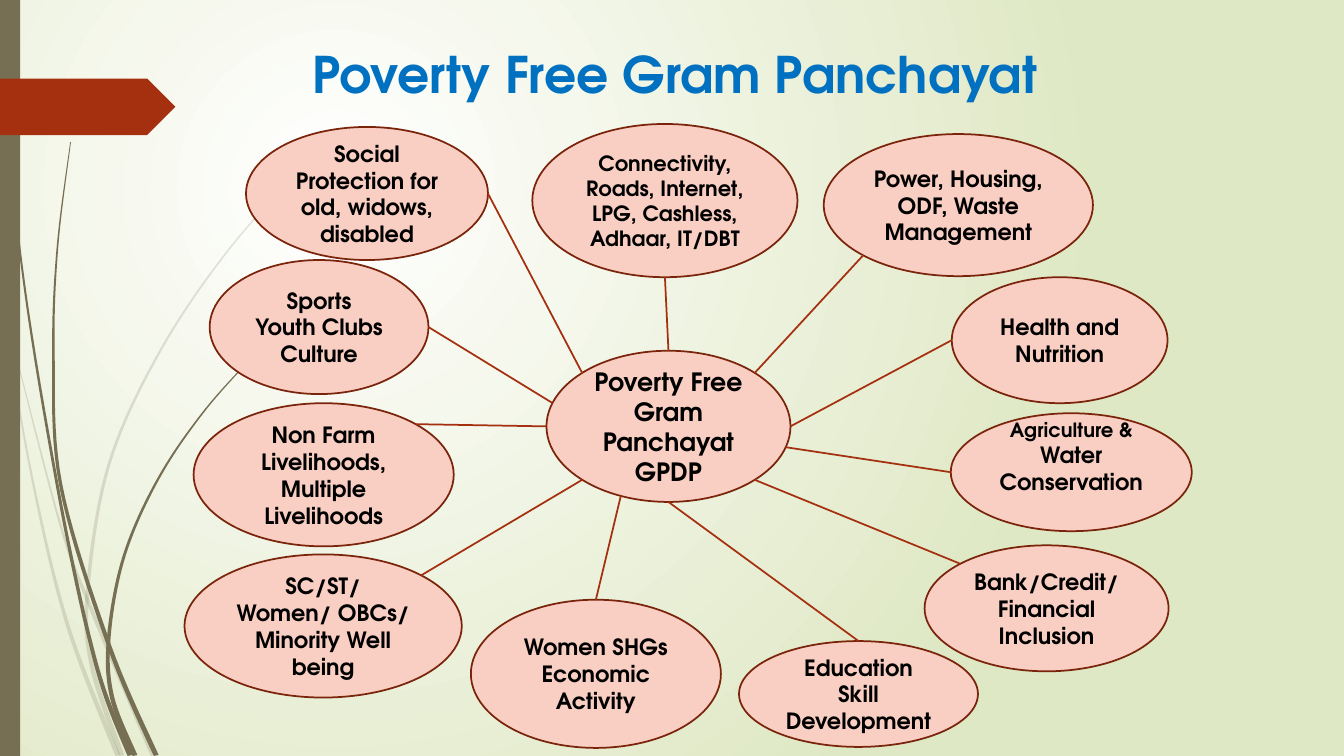
import math

import pptx
import pptx.util
import pptx.dml.color
import pptx.enum.shapes
import pptx.enum.text
import pptx.oxml
import pptx.oxml.ns

PX = 9144  # one px is a hundredth of an inch
FONT = "TeX Gyre Adventor"
COLORS = {"white": "FFFFFF", "green": "DFE8C4", "stem": "766F54", "tag": "A53010",
          "bubble": "F9CFC3", "rim": "7A240C", "text": "000000", "title": "0070C0"}

# Grass blades: points along the middle, from the thin tip to the root
PALE_BLADES = [
    [(0, 290), (31, 470), (67, 620), (117, 750)],
    [(14, 345), (60, 521), (90, 603), (152, 750)],
    [(312, 153), (229, 245), (159, 348), (108, 461), (87, 585), (91, 660), (121, 750)],
]
DARK_BLADES = [
    [(4, 0), (18, 233), (56, 477), (95, 658), (129, 750)],
    [(70, 141), (57, 245), (53, 349), (60, 480), (108, 640), (155, 750)],
    [(260, 344), (204, 406), (157, 475), (123, 552), (108, 632), (111, 691), (134, 750)],
]
BLADE_WIDTH = 5

TAG = [(0, 78), (146, 78), (174, 106), (146, 134), (0, 134)]

HUB_BOX = (542, 348, 242, 150)
HUB_LINES = [("Poverty Free Gram Panchayat", 18), ("GPDP", 18)]
# Box, lines with sizes, spoke angle at the hub, spoke angle at the topic
# (degrees clockwise from the right)
TOPICS = [
    ((528, 123, 263, 152), [("Connectivity,", 15),
                            ("Roads, Internet, LPG, Cashless, Adhaar, IT/DBT", 15)], 270, 90),
    ((817, 133, 267, 141), [("Power, Housing, ODF, Waste Management", 16)], 315, 135),
    ((944, 275, 214, 125), [("Health and Nutrition", 16)], 0, 180),
    ((943, 410, 239, 117), [("Agriculture &", 14), ("Water Conservation", 16)], 16, 180),
    ((917, 541, 242, 125), [("Bank/Credit/ Financial Inclusion", 16)], 45, 225),
    ((733, 636, 237, 105), [("Education", 16), ("Skill Development", 16)], 90, 270),
    ((467, 595, 248, 147), [("Women SHGs Economic Activity", 16)], 113, 270),
    ((183, 550, 275, 142), [("SC/ST/ Women/ OBCs/ Minority Well being", 16)], 135, 315),
    ((192, 400, 258, 142), [("Non Farm Livelihoods, Multiple Livelihoods", 16)], 180, 315),
    ((208, 258, 217, 133), [("Sports", 16), ("Youth Clubs Culture", 16)], 198, 0),
    ((244, 126, 240, 132), [("Social Protection for old, widows, disabled", 16)], 225, 0),
]
LIFTED = "Agriculture &"  # this bubble's text sits above its middle


def rgb(name):
    return pptx.dml.color.RGBColor.from_string(COLORS[name])


def emu(lengths):
    return [round(v * PX) for v in lengths]


def paint(shape, fill, line=None):
    shape.shadow.inherit = False
    shape.fill.solid()
    shape.fill.fore_color.rgb = rgb(fill)
    if line:
        shape.line.color.rgb = rgb(line)
        shape.line.width = pptx.util.Pt(1.25)
    else:
        shape.line.fill.background()


def write(shape, lines, color):
    tf = shape.text_frame
    tf.word_wrap = True
    tf.vertical_anchor = pptx.enum.text.MSO_ANCHOR.MIDDLE
    tf.text = "\n".join(text for text, size in lines)
    for p, (text, size) in zip(tf.paragraphs, lines):
        p.alignment = pptx.enum.text.PP_ALIGN.CENTER
        font = p.runs[0].font
        font.name, font.size, font.bold = FONT, pptx.util.Pt(size), True
        font.color.rgb = rgb(color)
    return tf


def smooth(knots, steps=10):
    """Points of a Catmull-Rom curve through the knots."""
    ends = knots[:1] + knots + knots[-1:]
    out = []
    for a, b, c, d in zip(ends, ends[1:], ends[2:], ends[3:]):
        for t in (k / steps for k in range(steps)):
            out.append(tuple(
                b[j] + t / 2 * (c[j] - a[j] + t * (2 * a[j] - 5 * b[j] + 4 * c[j] - d[j]
                                + t * (3 * (b[j] - c[j]) + d[j] - a[j])))
                for j in (0, 1)))
    return out + knots[-1:]


def ribbon(knots):
    """Outline of a blade that widens from its tip to its root."""
    pts = smooth(knots)
    last = len(pts) - 1
    left, right = [], []
    for i, (x, y) in enumerate(pts):
        (x0, y0), (x1, y1) = pts[max(i - 1, 0)], pts[min(i + 1, last)]
        half = BLADE_WIDTH / 2 * (0.15 + 0.85 * i / last) / math.hypot(x1 - x0, y1 - y0)
        dx, dy = half * (y1 - y0), half * (x1 - x0)
        left.append((max(x - dx, 0), min(y + dy, 750)))
        right.append((x + dx, min(max(y - dy, 0), 750)))
    return left + right[::-1]


def outline(s, pts, fill, opacity=100):
    pts = [emu(pt) for pt in pts]
    builder = s.shapes.build_freeform(*pts[0])
    builder.add_line_segments(pts[1:], close=True)
    shape = builder.convert_to_shape()
    paint(shape, fill)
    if opacity < 100:
        clr = shape._element.spPr.find(".//" + pptx.oxml.ns.qn("a:srgbClr"))
        clr.append(pptx.oxml.parse_xml("<a:alpha %s val='%d'/>" % (
            pptx.oxml.ns.nsdecls("a"), opacity * 1000)))


def backdrop(s):
    fill = s.background.fill
    fill.gradient()
    for stop, name in zip(fill.gradient_stops, ("white", "green")):
        stop.color.rgb = rgb(name)
    grad = s._element.find(".//" + pptx.oxml.ns.qn("a:gradFill"))
    grad.replace(grad.find(pptx.oxml.ns.qn("a:lin")), pptx.oxml.parse_xml(
        "<a:path %s path='circle'><a:fillToRect l='50000' t='50000' r='100000' b='100000'/>"
        "</a:path>" % pptx.oxml.ns.nsdecls("a")))


def left_border(s, box):
    for blades, opacity in ((PALE_BLADES, 20), (DARK_BLADES, 100)):
        for knots in blades:
            outline(s, ribbon(knots), "stem", opacity)
    paint(s.shapes.add_shape(pptx.enum.shapes.MSO_SHAPE.RECTANGLE, *emu(box)), "stem")
    outline(s, TAG, "tag")


def bubble(s, box, lines):
    shape = s.shapes.add_shape(pptx.enum.shapes.MSO_SHAPE.OVAL, *emu(box))
    paint(shape, "bubble", "rim")
    tf = write(shape, lines, "text")
    if lines[0][0] == LIFTED:
        tf.margin_bottom = 36 * PX


def rim_point(box, angle):
    x, y, w, h = box
    a = math.radians(angle)
    return x + w / 2 * (1 + math.cos(a)), y + h / 2 * (1 + math.sin(a))


def spoke(s, start, end):
    line = s.shapes.add_connector(pptx.enum.shapes.MSO_CONNECTOR.STRAIGHT,
                                  *emu(start + end))
    line.line.color.rgb = rgb("tag")
    line.line.width = pptx.util.Pt(1.25)
    line._element.spPr.append(pptx.oxml.parse_xml(
        "<a:effectLst %s/>" % pptx.oxml.ns.nsdecls("a")))


def hub_map(s, hub):
    for box, lines, *angles in TOPICS:
        bubble(s, box, lines)
    bubble(s, hub, HUB_LINES)
    for box, lines, hub_angle, topic_angle in TOPICS:
        spoke(s, rim_point(hub, hub_angle), rim_point(box, topic_angle))


def title(s, box):
    write(s.shapes.add_textbox(*emu(box)), [("Poverty Free Gram Panchayat", 36)], "title")


def main():
    prs = pptx.Presentation()
    prs.slide_width, prs.slide_height = emu((1333, 750))
    s = prs.slides.add_slide(prs.slide_layouts[6])
    backdrop(s)
    left_border(s, (0, 0, 20, 750))
    hub_map(s, HUB_BOX)
    title(s, (206, 23, 927, 99))
    prs.save("out.pptx")


if __name__ == "__main__":
    main()
